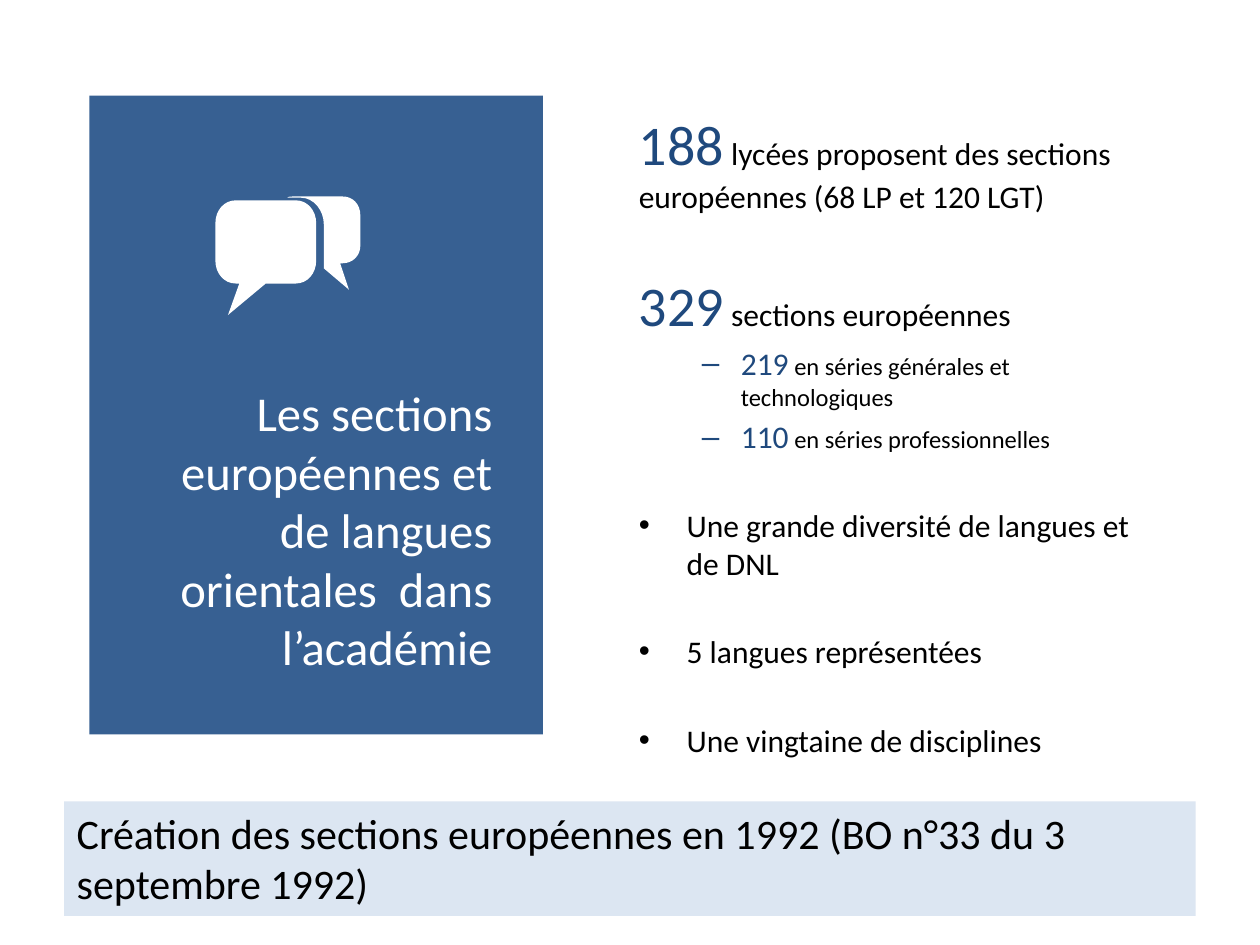
from pptx import Presentation
from pptx.dml.color import RGBColor
from pptx.enum.shapes import MSO_SHAPE
from pptx.enum.text import MSO_ANCHOR, MSO_AUTO_SIZE, PP_ALIGN
from pptx.oxml.ns import qn
from pptx.util import Inches, Pt
from lxml.etree import SubElement

NAVY, BLACK, WHITE = "1F497D", "000000", "FFFFFF"
FRONT_BUBBLE = [
    (1.87, 1.59), (1.78, 1.59, 1.71, 1.67, 1.71, 1.77), (1.71, 2.07),
    (1.71, 2.17, 1.78, 2.25, 1.87, 2.25), (1.9, 2.25), (1.81, 2.5),
    (2.11, 2.25), (2.35, 2.25), (2.44, 2.25, 2.51, 2.17, 2.51, 2.07),
    (2.51, 1.77), (2.51, 1.67, 2.44, 1.59, 2.35, 1.59),
]
BACK_BUBBLE = [
    (2.72, 1.56), (2.34, 1.56), (2.31, 1.56, 2.29, 1.56, 2.28, 1.57),
    (2.39, 1.57), (2.49, 1.57, 2.57, 1.67, 2.57, 1.78), (2.57, 2.13),
    (2.77, 2.3), (2.7, 2.09), (2.72, 2.09),
    (2.8, 2.09, 2.86, 2.03, 2.86, 1.95), (2.86, 1.71),
    (2.86, 1.62, 2.8, 1.56, 2.72, 1.56),
]
FACTS = [
    (0, "", 0, [("188", 32, NAVY), (" lycées proposent des sections européennes (68 LP et 120 LGT)", 18, BLACK)]),
    (32, "", 0, [("329", 32, NAVY), (" sections européennes", 18, BLACK)]),
    (3.5, "–", 1, [("219", 18, NAVY), (" en séries générales et technologiques", 14, BLACK)]),
    (3.5, "–", 1, [("110", 18, NAVY), (" en séries professionnelles", 14, BLACK)]),
    (29, "•", 0, [("Une grande diversité de langues et de DNL", 18, BLACK)]),
    (29, "•", 0, [("5 langues représentées", 18, BLACK)]),
    (29, "•", 0, [("Une vingtaine de disciplines", 18, BLACK)]),
]


def color(value):
    """Turn a hex string into a colour."""
    return RGBColor.from_string(value)


def format_span(span, size, value):
    """Set the font of a run."""
    span.font.name = "Calibri"
    span.font.size = Pt(size)
    span.font.color.rgb = color(value)


def paint(shape, value):
    """Give a shape a plain fill without line or shadow."""
    shape.shadow.inherit = False
    shape.fill.solid()
    shape.fill.fore_color.rgb = color(value)
    shape.line.fill.background()


def place(shape, left, top, width, height):
    """Move and size a shape in inches."""
    shape.left, shape.top = Inches(left), Inches(top)
    shape.width, shape.height = Inches(width), Inches(height)


def add_panel(page, left, top, width, height, value):
    """Add a filled rectangle."""
    panel = page.shapes.add_shape(
        MSO_SHAPE.RECTANGLE, Inches(left), Inches(top), Inches(width), Inches(height))
    paint(panel, value)
    return panel


def curve_points(start, curve, steps=8):
    """Return points along a cubic curve."""
    points = []
    for step in range(1, steps + 1):
        t = step / steps
        weights = ((1 - t) ** 3, 3 * t * (1 - t) ** 2, 3 * t * t * (1 - t), t ** 3)
        points.append(tuple(
            sum(weight * value for weight, value in zip(weights, (start[axis], *curve[axis::2])))
            for axis in (0, 1)))
    return points


def add_bubble(page, outline):
    """Add a white speech bubble from corners and curves."""
    points = [outline[0]]
    for part in outline[1:]:
        points += [part] if len(part) == 2 else curve_points(points[-1], part)
    corners = [(Inches(x), Inches(y)) for x, y in points]
    builder = page.shapes.build_freeform(*corners[0])
    builder.add_line_segments(corners[1:], close=True)
    paint(builder.convert_to_shape(), WHITE)


def set_bullet(para, mark, level):
    """Give a paragraph a hanging bullet."""
    margin, hanging = ((0.38, 0.38), (0.81, 0.31))[level]
    para.level = level
    properties = para._p.get_or_add_pPr()
    properties.set("marL", str(Inches(margin)))
    properties.set("indent", str(-Inches(hanging)))
    SubElement(properties, qn("a:buFont")).set("typeface", "Arial")
    SubElement(properties, qn("a:buChar")).set("char", mark)


def set_title(page):
    """Fill and format the title."""
    title = page.shapes.title
    place(title, 1.14, 2.18, 2.87, 4.04)
    frame = title.text_frame
    frame.text = "Les sections européennes et de langues orientales  dans l’académie"
    frame.auto_size = MSO_AUTO_SIZE.NONE
    frame.vertical_anchor = MSO_ANCHOR.MIDDLE
    para = frame.paragraphs[0]
    para.alignment = PP_ALIGN.RIGHT
    format_span(para.runs[0], 27.8, WHITE)


def add_facts(page):
    """Add the column of figures and bullets."""
    box = page.shapes.add_textbox(Inches(5), Inches(0.83), Inches(4.27), Inches(5.4))
    frame = box.text_frame
    frame.word_wrap = True
    frame.margin_left = frame.margin_right = Inches(0.07)
    frame.margin_top = frame.margin_bottom = Inches(0.04)
    for index, (space, mark, level, spans) in enumerate(FACTS):
        para = frame.add_paragraph() if index else frame.paragraphs[0]
        para.space_before = Pt(space)
        if mark:
            set_bullet(para, mark, level)
        for text, size, value in spans:
            span = para.add_run()
            span.text = text
            format_span(span, size, value)


def add_footer(page):
    """Add the banner with the founding date."""
    frame = add_panel(page, 0.51, 6.36, 8.98, 0.91, "DCE6F2").text_frame
    frame.word_wrap = True
    frame.vertical_anchor = MSO_ANCHOR.TOP
    frame.text = "Création des sections européennes en 1992 (BO n°33 du 3 septembre 1992)"
    para = frame.paragraphs[0]
    para.alignment = PP_ALIGN.LEFT
    format_span(para.runs[0], 24, BLACK)


def main():
    """Build and save the slide."""
    deck = Presentation()
    deck.slide_width, deck.slide_height = Inches(10), Inches(7.5)
    page = deck.slides.add_slide(deck.slide_layouts[5])
    panel = add_panel(page, 0.71, 0.76, 3.6, 5.07, "376092")
    page.shapes.title._element.addprevious(panel._element)
    set_title(page)
    add_facts(page)
    for outline in (FRONT_BUBBLE, BACK_BUBBLE):
        add_bubble(page, outline)
    add_footer(page)
    deck.save("out.pptx")


if __name__ == "__main__":
    main()
